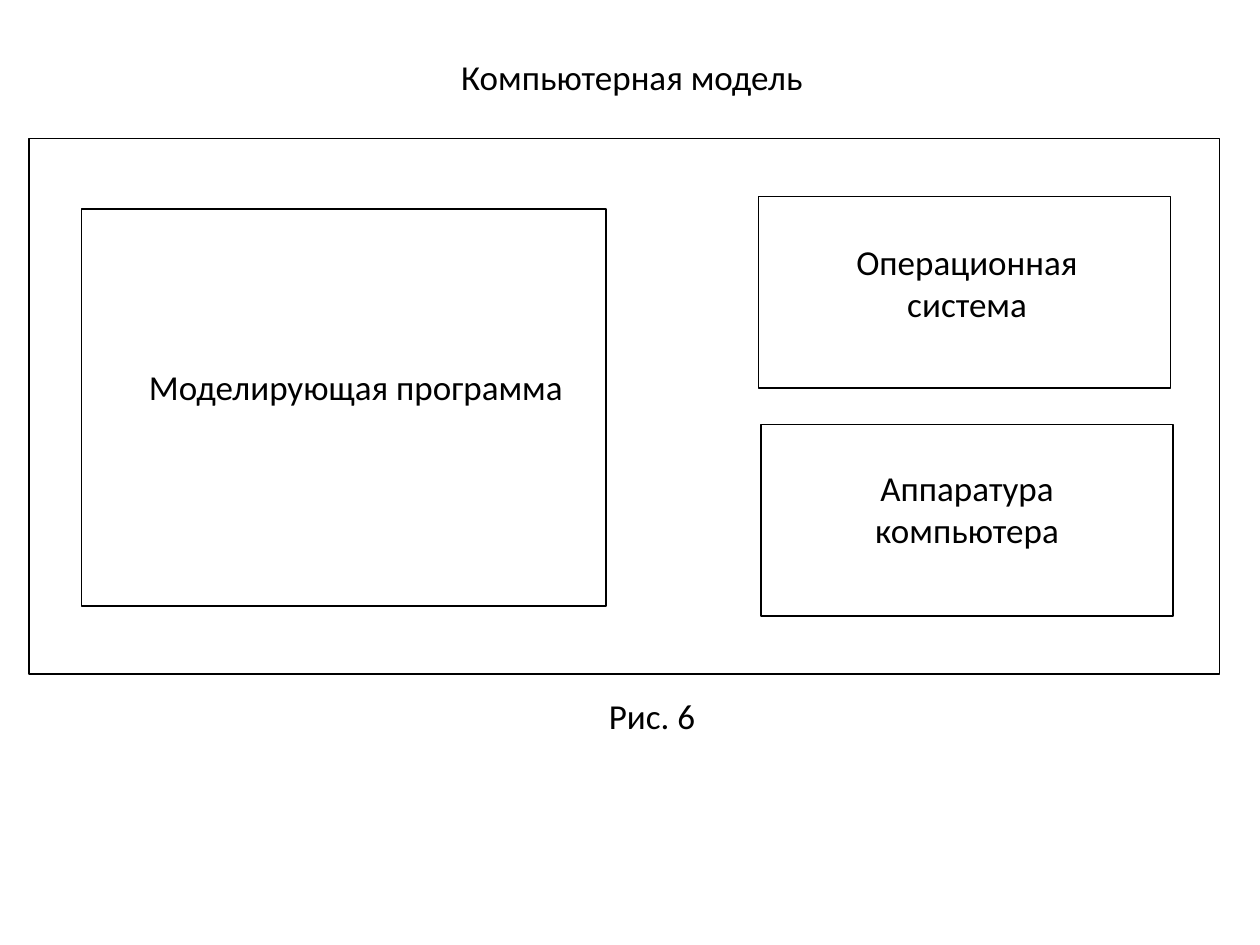
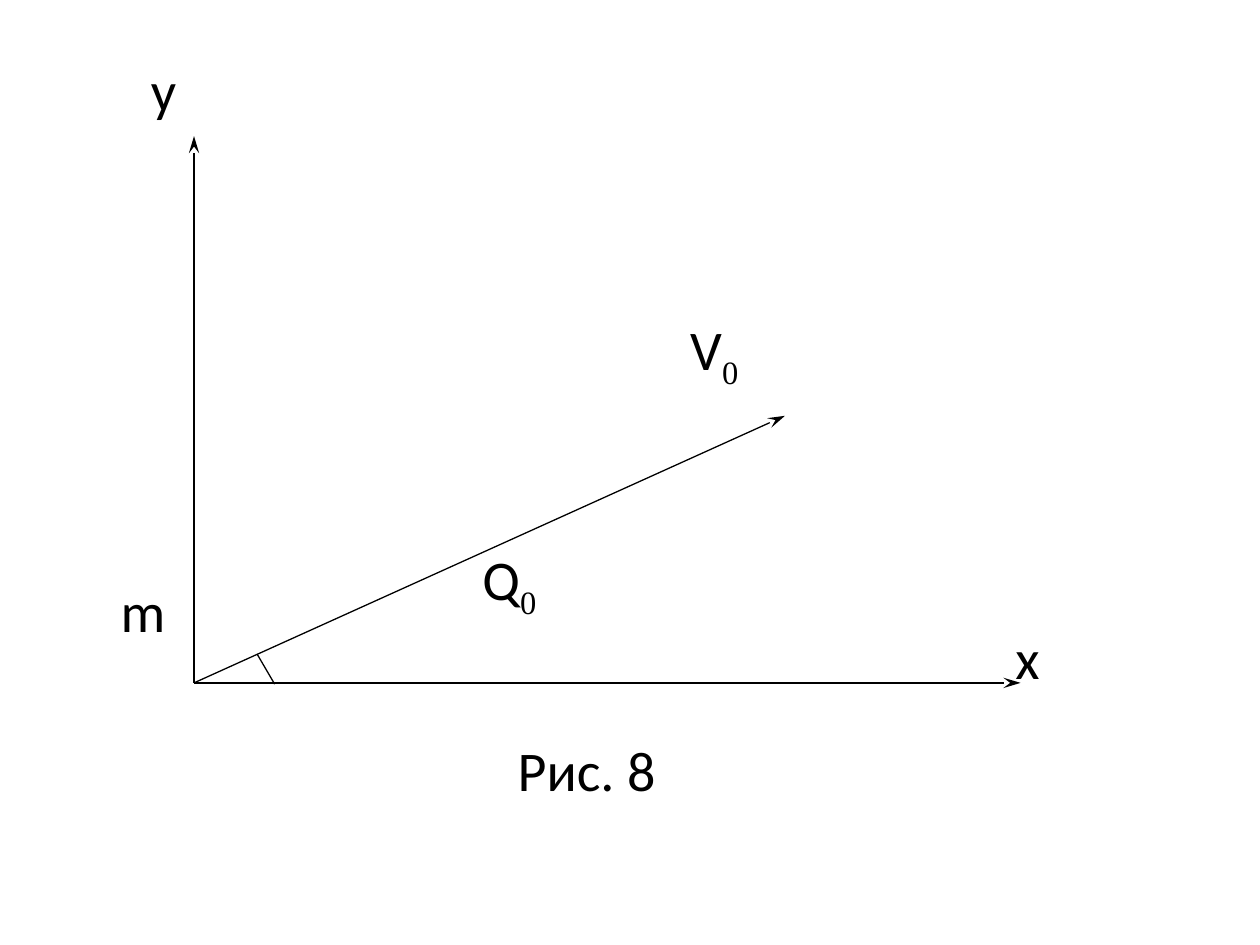
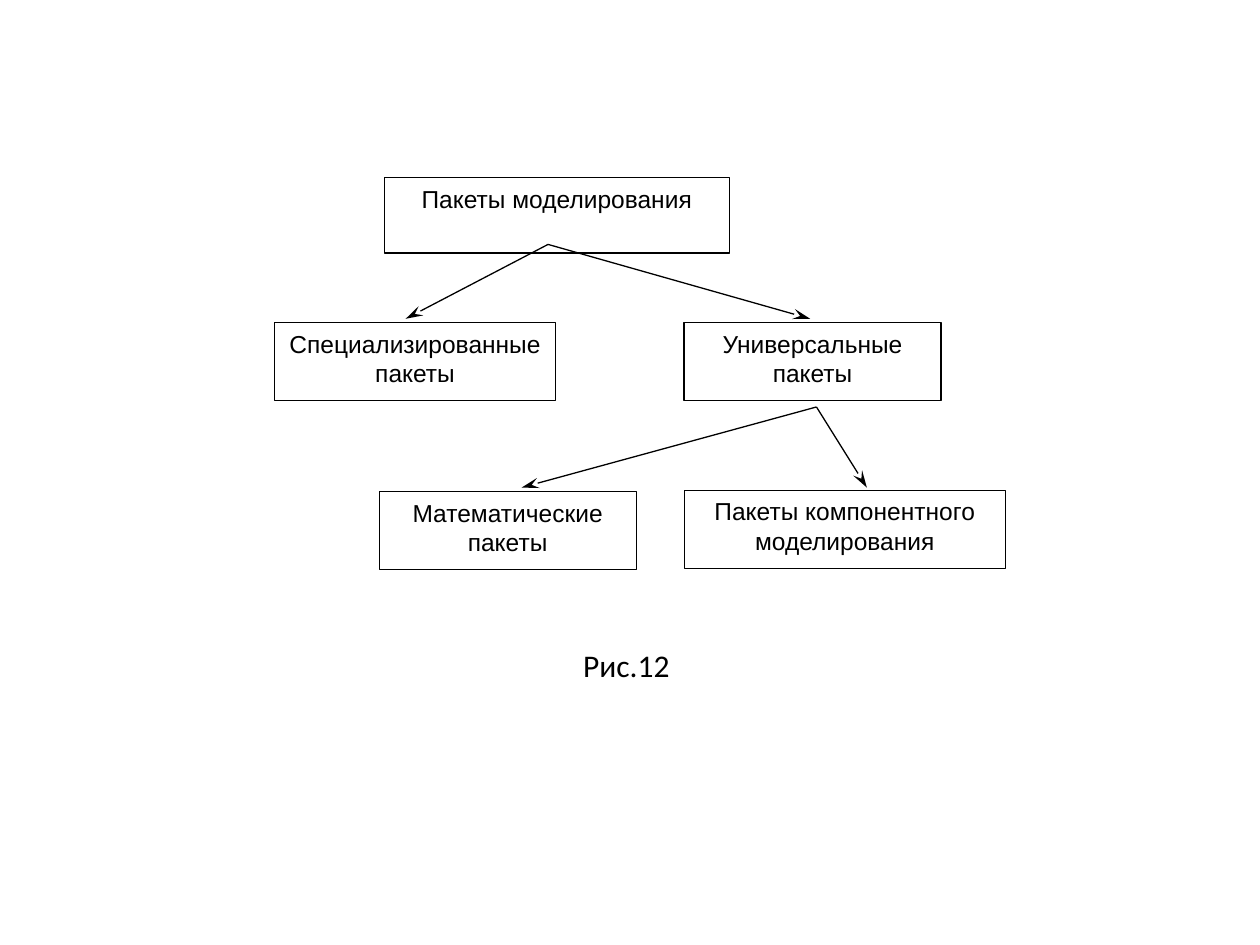
from lxml import etree
from pptx import Presentation
from pptx.dml.color import RGBColor
from pptx.enum.shapes import MSO_CONNECTOR, MSO_SHAPE
from pptx.enum.text import MSO_ANCHOR, MSO_AUTO_SIZE, PP_ALIGN
from pptx.oxml.ns import qn
from pptx.util import Inches, Pt

RECT, STRAIGHT = MSO_SHAPE.RECTANGLE, MSO_CONNECTOR.STRAIGHT
LEFT, CENTER = PP_ALIGN.LEFT, PP_ALIGN.CENTER
TOP, NO_FIT = MSO_ANCHOR.TOP, MSO_AUTO_SIZE.NONE
TITLE_ONLY, BLANK = 5, 6

BLACK, WHITE = "000000", "FFFFFF"
LINE_WIDTH = Pt(0.75)
BODY_FONT, BOX_FONT, INDEX_FONT = "Calibri", "Arial", "Times New Roman"


def color(value):
    return RGBColor.from_string(value)


def format_run(r, size, font):
    r.font.size = Pt(size)
    r.font.name = font
    r.font.color.rgb = color(BLACK)


def write(sp, text, size, font=BODY_FONT, align=LEFT, after=0, wrap=True):
    tf = sp.text_frame
    tf.text = text
    tf.word_wrap = wrap
    tf.auto_size = NO_FIT
    tf.vertical_anchor = TOP
    p = tf.paragraphs[0]
    p.alignment = align
    p.space_after = Pt(after)
    format_run(p.runs[0], size, font)
    return p


def add_text(s, at, text, size, **style):
    return write(s.shapes.add_textbox(*map(Inches, at)), text, size, **style)


def add_subscript(p, text, size):
    r = p.add_run()
    r.text = text
    format_run(r, size, INDEX_FONT)
    r._r.get_or_add_rPr().set("baseline", "-25000")


def add_box(s, at, text=None, filled=True):
    sp = s.shapes.add_shape(RECT, *map(Inches, at))
    sp.shadow.inherit = False
    if filled:
        sp.fill.solid()
        sp.fill.fore_color.rgb = color(WHITE)
    else:
        sp.fill.background()
    sp.line.color.rgb = color(BLACK)
    sp.line.width = LINE_WIDTH
    if text:
        write(sp, text, 14, font=BOX_FONT, align=CENTER)


def add_line(s, start, end, arrow=True):
    line = s.shapes.add_connector(STRAIGHT, *map(Inches, start + end))
    line.line.color.rgb = color(BLACK)
    line.line.width = LINE_WIDTH
    spPr = line._element.spPr
    if arrow:
        etree.SubElement(spPr.find(qn("a:ln")), qn("a:tailEnd"),
                         type="stealth", w="med", len="lg")
    etree.SubElement(spPr, qn("a:effectLst"))


def add_slide(prs, layout=BLANK):
    return prs.slides.add_slide(prs.slide_layouts[layout])


def build_computer_model(prs):
    s = add_slide(prs, TITLE_ONLY)
    title = s.shapes.title
    title.left, title.top, title.width, title.height = map(Inches, (2.52, 0.39, 4.99, 1.2))
    write(title, "Компьютерная модель", 20, align=CENTER, after=10)

    for at in ((0.23, 1.1, 9.45, 4.25), (0.65, 1.66, 4.16, 3.15)):
        add_box(s, at, filled=False)
    for at in ((6.02, 1.56, 3.27, 1.52), (6.04, 3.37, 3.27, 1.52)):
        add_box(s, at)
    labels = (
        ((0.33, 2.85, 4.99, 1.2), "Моделирующая программа"),
        ((6.55, 1.86, 2.25, 1.2), "Операционная система"),
        ((6.55, 3.65, 2.25, 1.2), "Аппаратура компьютера"),
        ((4.48, 5.46, 1.39, 0.87), "Рис. 6"),
    )
    for at, text in labels:
        add_text(s, at, text, 20, align=CENTER, after=10)


def build_throw_axes(prs):
    s = add_slide(prs)
    origin = (1.54, 5.42)
    for end in ((1.54, 1.08), (8.1, 5.42), (6.23, 3.3)):
        add_line(s, origin, end)
    add_line(s, (2.04, 5.19), (2.18, 5.43), arrow=False)

    size = 32
    labels = (
        (1.1, 0.39, 1.26, "y", ""),
        (7.96, 4.9, 1.26, "x", ""),
        (5.38, 2.45, 1.26, "V", "0"),
        (3.73, 4.27, 1.26, "Q", "0"),
        (4.01, 5.79, 2.09, "Рис. 8", ""),
        (0.86, 4.53, 0.76, "m", ""),
    )
    for left, top, width, text, index in labels:
        p = add_text(s, (left, top, width, 1.09), text, size, after=10)
        if index:
            add_subscript(p, index, size)


def build_package_tree(prs):
    s = add_slide(prs)
    boxes = (
        ((3.05, 1.41, 2.74, 0.6), "Пакеты моделирования"),
        ((2.18, 2.56, 2.23, 0.62), "Специализированные пакеты"),
        ((5.43, 2.56, 2.04, 0.62), "Универсальные пакеты"),
        ((3.01, 3.9, 2.04, 0.62), "Математические пакеты"),
        ((5.43, 3.89, 2.55, 0.62), "Пакеты компонентного моделирования"),
    )
    for at, text in boxes:
        add_box(s, at, text)

    branches = (
        ((6.48, 3.23), ((4.14, 3.87), (6.88, 3.87))),
        ((4.35, 1.94), ((3.22, 2.53), (6.43, 2.53))),
    )
    for start, ends in branches:
        for end in ends:
            add_line(s, start, end)
    add_text(s, (4.53, 5.08, 0.89, 0.4), "Рис.12", 18, wrap=False)


def main():
    prs = Presentation()
    prs.slide_width, prs.slide_height = Inches(10), Inches(7.5)
    build_computer_model(prs)
    build_throw_axes(prs)
    build_package_tree(prs)
    prs.save("out.pptx")


if __name__ == "__main__":
    main()
